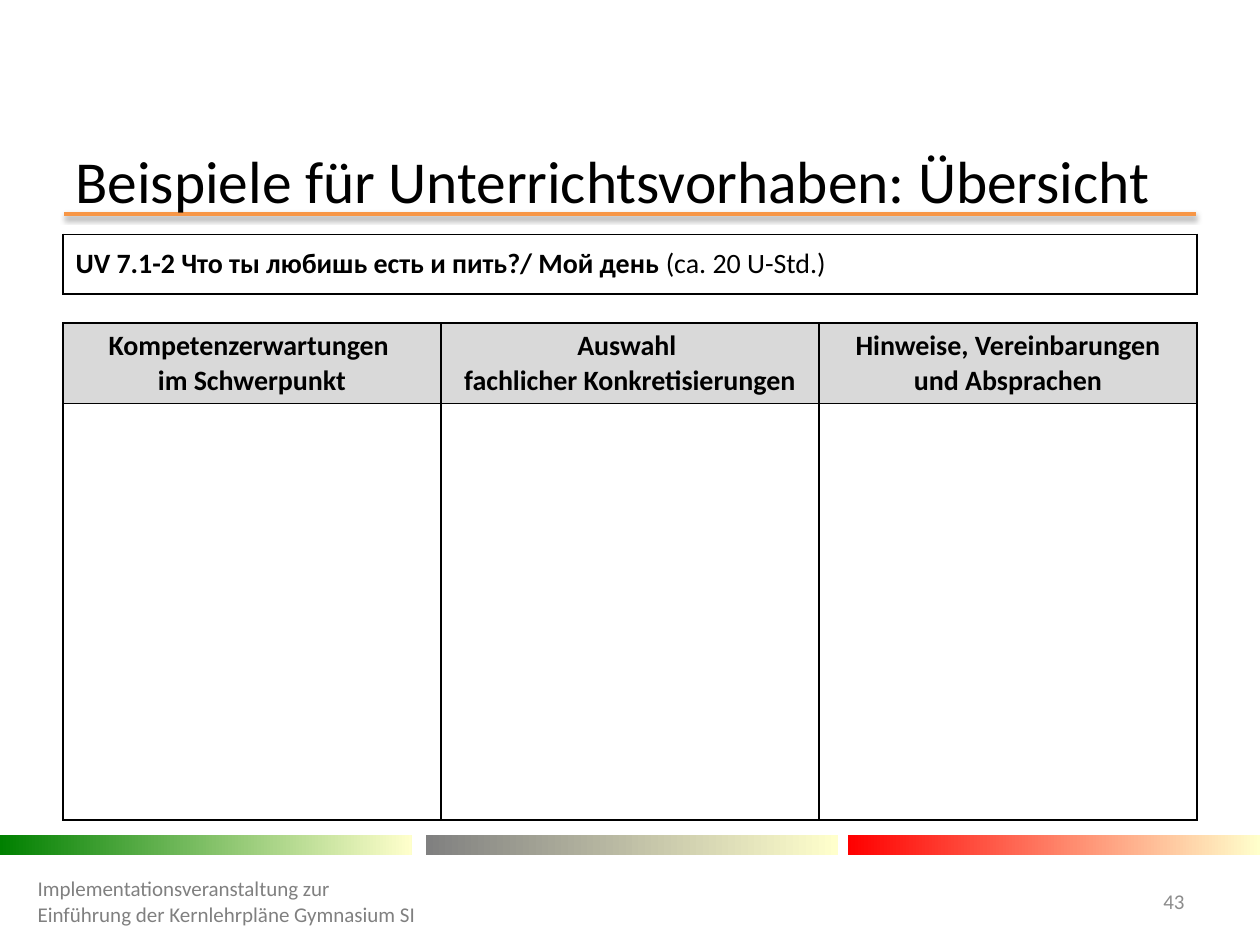
import pptx
import pptx.util
import pptx.dml.color
import pptx.enum.shapes
import pptx.enum.text
import pptx.oxml
import pptx.oxml.ns

Pt = pptx.util.Pt
ALIGN = pptx.enum.text.PP_ALIGN
MIDDLE = pptx.enum.text.MSO_ANCHOR.MIDDLE
FONT = "Calibri"
COLORS = {
    "text": "000000", "rule": "F79646", "head": "D9D9D9",
    "foot": "808080", "page": "8C8C8C", "green": "008000",
    "gray": "808080", "red": "FF0000", "cream": "FFFFCC",
}

TITLE = "Beispiele für Unterrichtsvorhaben: Übersicht"
UNIT = [("UV 7.1-2 Что ты любишь есть и пить?/ Мой день ", True),
        ("(ca. 20 U-Std.)", False)]
HEADS = ["Kompetenzerwartungen \nim Schwerpunkt",
         "Auswahl \nfachlicher Konkretisierungen",
         "Hinweise, Vereinbarungen und Absprachen"]
FOOTER = "Implementationsveranstaltung zur Einführung der Kernlehrpläne Gymnasium SI"
PAGE = "43"
BARS = [(0, "green"), (243.5, "gray"), (484.7, "red")]
ROWS = [34, 16.5, 46, 238]
COL = 216


def rgb(name):
    return pptx.dml.color.RGBColor.from_string(COLORS[name])


def style(run, size, color="text", bold=False):
    run.font.name = FONT
    run.font.size = Pt(size)
    run.font.bold = bold
    run.font.color.rgb = rgb(color)


def label(slide, text, box, size, color, align=ALIGN.LEFT):
    frame = slide.shapes.add_textbox(*map(Pt, box)).text_frame
    frame.word_wrap = True
    frame.vertical_anchor = MIDDLE
    frame.text = text
    para = frame.paragraphs[0]
    para.alignment = align
    style(para.runs[0], size, color)


def effect(line, inner=""):
    """Set the effect list of a connector; an empty one removes its shadow."""
    space = pptx.oxml.ns.nsdecls("a")
    line._element.spPr.append(pptx.oxml.parse_xml(
        f"<a:effectLst {space}>{inner}</a:effectLst>"))


def border(cell, sides):
    """Draw black 1 pt lines on the named sides and none on the others."""
    space = pptx.oxml.ns.nsdecls("a")
    props = cell._tc.get_or_add_tcPr()
    for spot, side in enumerate("LRTB"):
        paint = "<a:noFill/>"
        if side in sides:
            paint = f'<a:solidFill><a:srgbClr val="{COLORS["text"]}"/></a:solidFill>'
        props.insert(spot, pptx.oxml.parse_xml(
            f'<a:ln{side} {space} w="12700">{paint}</a:ln{side}>'))


def add_grid(slide):
    frame = slide.shapes.add_table(len(ROWS), len(HEADS), Pt(36), Pt(134),
                                   Pt(COL * len(HEADS)), Pt(sum(ROWS)))
    table = frame.table
    table.first_row = table.horz_banding = False
    for col in table.columns:
        col.width = Pt(COL)
    for r, height in enumerate(ROWS):
        table.rows[r].height = Pt(height)
        for c in range(len(HEADS)):
            cell = table.cell(r, c)
            cell.vertical_anchor = MIDDLE
            cell.fill.background()
            border(cell, "TB" if r == 1 else "LRTB")

    table.cell(0, 0).merge(table.cell(0, 2))
    table.cell(1, 0).merge(table.cell(1, 1))
    para = table.cell(0, 0).text_frame.paragraphs[0]
    for text, bold in UNIT:
        run = para.add_run()
        run.text = text
        style(run, 16, bold=bold)

    for c, text in enumerate(HEADS):
        gap = table.cell(1, c)
        gap.margin_top = gap.margin_bottom = 0
        end = gap.text_frame.paragraphs[0]._p.get_or_add_endParaRPr()
        end.set("sz", "600")  # lets the spacer row stay low
        cell = table.cell(2, c)
        cell.fill.solid()
        cell.fill.fore_color.rgb = rgb("head")
        para = cell.text_frame.paragraphs[0]
        para.text = text
        para.alignment = ALIGN.CENTER
        for run in para.runs:
            style(run, 16, bold=True)


def main():
    deck = pptx.Presentation()
    deck.slide_width, deck.slide_height = Pt(720), Pt(540)
    slide = deck.slides.add_slide(deck.slide_layouts[6])

    rule = slide.shapes.add_connector(
        pptx.enum.shapes.MSO_CONNECTOR.STRAIGHT, Pt(36.7), Pt(122.4), Pt(683.3), Pt(122.4))
    rule.line.color.rgb = rgb("rule")
    rule.line.width = Pt(2)
    effect(rule, '<a:outerShdw blurRad="39370" dist="20320" dir="5400000" rotWithShape="0">'
                 '<a:srgbClr val="000000"><a:alpha val="38000"/></a:srgbClr></a:outerShdw>')

    for left, color in BARS:
        bar = slide.shapes.add_shape(pptx.enum.shapes.MSO_SHAPE.RECTANGLE,
                                     Pt(left), Pt(477.3), Pt(235.3), Pt(11.5))
        bar.shadow.inherit = False
        bar.line.fill.background()
        bar.fill.gradient()
        bar.fill.gradient_angle = 0
        for stop, name in zip(bar.fill.gradient_stops, (color, "cream")):
            stop.color.rgb = rgb(name)

    label(slide, TITLE, (36, 88.5, 648, 28), 34, "text")
    label(slide, PAGE, (638, 500.5, 46, 28.8), 12, "page", ALIGN.RIGHT)
    label(slide, FOOTER, (14.4, 500.5, 233.3, 28.8), 12, "foot")
    add_grid(slide)
    deck.save("out.pptx")


if __name__ == "__main__":
    main()
